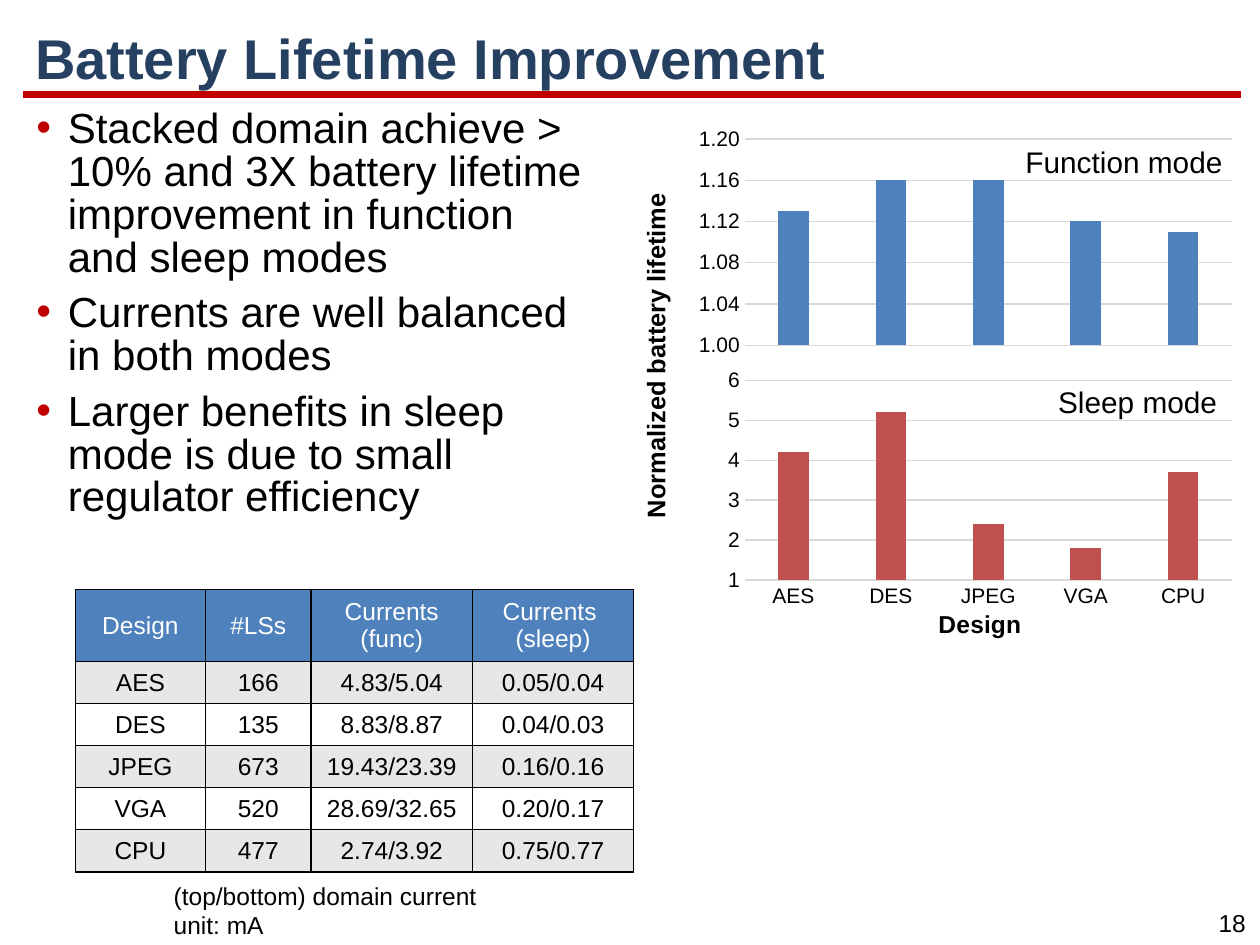
from lxml import etree
from pptx import Presentation
from pptx import util as u
from pptx.chart.data import CategoryChartData
from pptx.dml.color import RGBColor
from pptx.enum import chart as ch, shapes, text
from pptx.oxml import parse_xml
from pptx.oxml.ns import nsdecls, qn

THEME = dict(
    font="Arial", ink="000000", navy="254061", red="C00000", white="FFFFFF",
    blue="4F81BD", brick="C0504D", band="E7E7E7", grid="D9D9D9",
    title=32, body=24, mode=17, axis=14.5, small=14, tick=12,
)
TITLE = "Battery Lifetime Improvement"
POINTS = [
    "Stacked domain achieve > 10% and 3X battery lifetime improvement in function and sleep modes",
    "Currents are well balanced in both modes",
    "Larger benefits in sleep mode is due to small regulator efficiency",
]
HEAD = ("Design", "#LSs", "Currents\n(func)", "Currents \n(sleep)")
ROWS = [
    ("AES", "166", "4.83/5.04", "0.05/0.04"),
    ("DES", "135", "8.83/8.87", "0.04/0.03"),
    ("JPEG", "673", "19.43/23.39", "0.16/0.16"),
    ("VGA", "520", "28.69/32.65", "0.20/0.17"),
    ("CPU", "477", "2.74/3.92", "0.75/0.77"),
]
WIDTHS = (1.03, 0.84, 1.28, 1.28)
HEAD_H, ROW_H = 0.57, 0.33
CHARTS = [
    dict(box=(5.17, 2.9, 4.75, 2.23), vals=(4.2, 5.2, 2.4, 1.8, 3.7), hue="brick",
         top=6, step=1, form="0", high=0.71, name="Design"),
    dict(box=(5.17, 0.99, 4.75, 2.1), vals=(1.13, 1.16, 1.16, 1.12, 1.11), hue="blue",
         top=1.2, step=0.04, form="0.00", high=0.78, name=None),
]
LABELS = [
    ("Sleep mode", (8.3, 3, 1.47, 0.39), "mode"),
    ("Function mode", (8.04, 1.09, 1.78, 0.39), "mode"),
    ("(top/bottom) domain current\nunit: mA", (1.28, 6.94, 2.69, 0.57), "small"),
]


def tint(name):
    """Return the theme colour of that name."""
    return RGBColor.from_string(THEME[name])


def style(font, size, hue="ink", bold=False):
    """Set face, size, colour and weight of a font."""
    font.name, font.size, font.bold = THEME["font"], u.Pt(THEME[size]), bold
    font.color.rgb = tint(hue)


def write(frame, lines, size="small", hue="ink", bold=False, align=None, lead=None,
          gap=None, bullet=None):
    """Fill a text frame with one paragraph per line in the given format."""
    for i, line in enumerate(lines):
        para = frame.add_paragraph() if i else frame.paragraphs[0]
        para.text, para.alignment = line, align
        para.line_spacing = lead
        para.space_before = gap
        for run in para.runs:
            style(run.font, size, hue, bold)
        for brk in para._p.findall(qn("a:br")):
            etree.SubElement(brk, qn("a:rPr"), sz=str(THEME[size] * 100))
        if bullet:
            props = para._p.get_or_add_pPr()
            props.set("marL", str(u.Inches(0.25)))
            props.set("indent", str(u.Inches(-0.25)))
            clr = etree.SubElement(props, qn("a:buClr"))
            etree.SubElement(clr, qn("a:srgbClr"), val=THEME["red"])
            etree.SubElement(props, qn("a:buFont"), typeface=THEME["font"])
            etree.SubElement(props, qn("a:buChar"), char=bullet)


def label(slide, lines, box, wrap=True, anchor=text.MSO_ANCHOR.TOP, turn=None, **form):
    """Add a text box holding the given lines."""
    frame = slide.shapes.add_textbox(*map(u.Inches, box)).text_frame
    frame.word_wrap, frame.vertical_anchor = wrap, anchor
    if turn:
        frame._txBody.bodyPr.set("vert", turn)
    write(frame, lines, **form)


def rule(slide):
    """Draw the red line below the title."""
    line = slide.shapes.add_connector(
        shapes.MSO_CONNECTOR.STRAIGHT, *map(u.Inches, (0.18, 0.75, 9.85, 0.75)))
    line.line.color.rgb, line.line.width = tint("red"), u.Pt(4.5)
    etree.SubElement(line._element.spPr, qn("a:effectLst"))


def bars(slide, box, vals, hue, top, step, form, high, name):
    """Add one column chart of the normalized lifetime."""
    data = CategoryChartData(number_format=form)
    data.categories = [row[0] for row in ROWS]
    data.add_series("Series 1", vals)
    chart = slide.shapes.add_chart(
        ch.XL_CHART_TYPE.COLUMN_CLUSTERED, *map(u.Inches, box), data).chart
    chart.has_legend = chart.has_title = False
    style(chart.font, "tick")
    plot = chart.plots[0]
    plot.gap_width, plot.overlap, plot.vary_by_categories = 219, -27, False
    fill = plot.series[0].format.fill
    fill.solid()
    fill.fore_color.rgb = tint(hue)
    val, cat = chart.value_axis, chart.category_axis
    val.minimum_scale, val.maximum_scale, val.major_unit = 1, top, step
    val.tick_labels.number_format = form
    val.tick_labels.number_format_is_linked = False
    val.format.line.fill.background()
    for line in (val.major_gridlines.format.line, cat.format.line):
        line.color.rgb, line.width = tint("grid"), u.Pt(0.75)
    for axis in (val, cat):
        axis.major_tick_mark = ch.XL_TICK_MARK.NONE
        style(axis.tick_labels.font, "tick")
    if name:
        write(cat.axis_title.text_frame, [name], bold=True)
    else:
        cat.visible = False
    area = chart._chartSpace.chart.plotArea
    for old in area.findall(qn("c:layout")):
        area.remove(old)
    spots = "".join(f'<c:{tag} val="{num}"/>' for tag, num in (
        ("layoutTarget", "inner"), ("xMode", "edge"), ("yMode", "edge"),
        ("x", 0.156), ("y", 0.054), ("w", 0.814), ("h", high)))
    area.insert(0, parse_xml(
        f'<c:layout {nsdecls("c")}><c:manualLayout>{spots}</c:manualLayout></c:layout>'))


def edge(cell):
    """Give a cell thin black borders."""
    props = cell._tc.get_or_add_tcPr()
    for i, side in enumerate("LRTB"):
        props.insert(i, parse_xml(
            f'<a:ln{side} {nsdecls("a")} w="{u.Pt(1)}"><a:solidFill>'
            f'<a:srgbClr val="{THEME["ink"]}"/></a:solidFill></a:ln{side}>'))


def grid(slide):
    """Add the table of currents."""
    rows = [HEAD] + ROWS
    tall = HEAD_H + ROW_H * len(ROWS)
    table = slide.shapes.add_table(
        len(rows), len(HEAD), *map(u.Inches, (0.6, 4.68, sum(WIDTHS), tall))).table
    for col, wide in zip(table.columns, WIDTHS):
        col.width = u.Inches(wide)
    for r, row in enumerate(rows):
        table.rows[r].height = u.Inches(ROW_H if r else HEAD_H)
        back = ("white", "band")[r % 2] if r else "blue"
        for c, word in enumerate(row):
            cell = table.cell(r, c)
            cell.vertical_anchor = text.MSO_ANCHOR.MIDDLE
            cell.fill.solid()
            cell.fill.fore_color.rgb = tint(back)
            edge(cell)
            write(cell.text_frame, [word], hue="ink" if r else "white",
                  align=text.PP_ALIGN.CENTER)


def main():
    """Build the slide and save it."""
    deck = Presentation()
    deck.slide_width, deck.slide_height = u.Inches(10), u.Inches(7.5)
    slide = deck.slides.add_slide(deck.slide_layouts[6])
    rule(slide)
    label(slide, ["18"], (9.56, 7.16, 0.44, 0.34), wrap=False, align=text.PP_ALIGN.CENTER)
    label(slide, [TITLE], (0.18, 0.16, 9.68, 0.65), anchor=text.MSO_ANCHOR.MIDDLE,
          size="title", hue="navy", bold=True, lead=0.9)
    label(slide, POINTS, (0.19, 0.82, 4.61, 3.68), size="body", lead=0.85,
          gap=u.Pt(7.2), bullet="•")
    for part in CHARTS:
        bars(slide, **part)
    label(slide, ["Normalized battery lifetime"], (5.03, 1.4, 0.45, 2.81),
          turn="vert270", size="axis", bold=True)
    grid(slide)
    for words, box, size in LABELS:
        label(slide, [words], box, size=size)
    deck.save("out.pptx")


if __name__ == "__main__":
    main()
